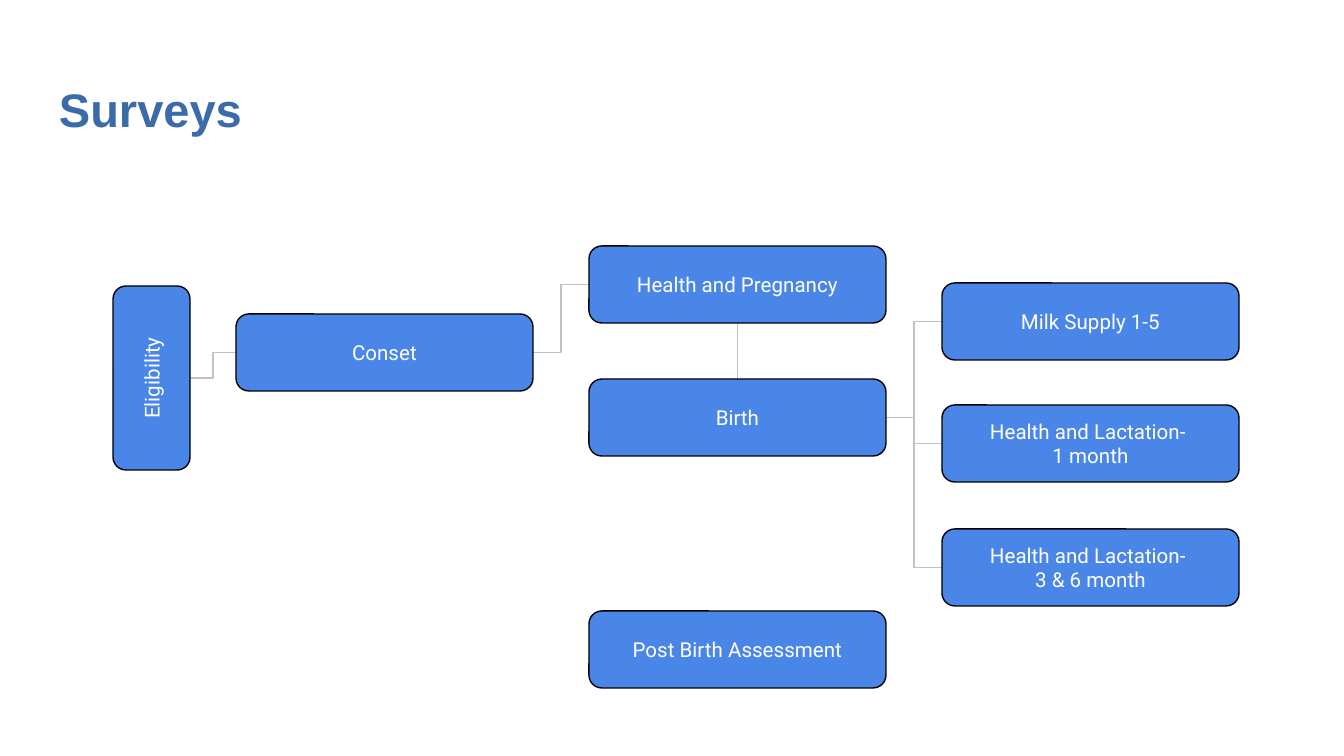
from dataclasses import dataclass

from lxml.etree import SubElement
from pptx import Presentation
from pptx.dml.color import RGBColor as Color
from pptx.enum.shapes import MSO_CONNECTOR as Connector, MSO_SHAPE as Shape
from pptx.enum.text import MSO_ANCHOR as Anchor, PP_ALIGN as Align
from pptx.oxml.ns import qn
from pptx.util import Emu, Pt

EMU_PER_PX = 914400 / 134.4


def px(length):
    return Emu(round(length * EMU_PER_PX))


@dataclass(frozen=True)
class Theme:
    title_color: Color = Color.from_string("3C6BA9")
    box_fill: Color = Color.from_string("4A86E8")
    box_line: Color = Color.from_string("000000")
    box_text: Color = Color.from_string("FFFFFF")
    link: Color = Color.from_string("C2C2C2")
    title_font: str = "Arial"
    box_font: str = "Roboto"
    title_size: float = 25.2
    box_size: float = 11
    line_width: float = 0.75
    inset: int = 13


class FlowPage:
    """Draws the elements of a survey flow on one page."""

    def __init__(self, page, theme):
        self.page = page
        self.theme = theme

    def set_text(self, shape, text, font, size, color, anchor, align, bold=False):
        frame = shape.text_frame
        frame.text = text
        frame.word_wrap = True
        frame.vertical_anchor = anchor
        frame.margin_left = frame.margin_right = px(self.theme.inset)
        frame.margin_top = frame.margin_bottom = px(self.theme.inset)
        for para in frame.paragraphs:
            para.alignment = align
            for span in para.runs:
                span.font.name = font
                span.font.size = Pt(size)
                span.font.bold = bold
                span.font.color.rgb = color

    def title(self, text, left, top, width, height):
        theme = self.theme
        box = self.page.shapes.add_textbox(*map(px, (left, top, width, height)))
        self.set_text(box, text, theme.title_font, theme.title_size,
                      theme.title_color, Anchor.BOTTOM, Align.LEFT, bold=True)

    def box(self, text, left, top, width, height, rotation=0):
        theme = self.theme
        box = self.page.shapes.add_shape(
            Shape.ROUNDED_RECTANGLE, *map(px, (left, top, width, height)))
        box.rotation = rotation
        box.shadow.inherit = False
        box.fill.solid()
        box.fill.fore_color.rgb = theme.box_fill
        box.line.color.rgb = theme.box_line
        box.line.width = Pt(theme.line_width)
        self.set_text(box, text, theme.box_font, theme.box_size,
                      theme.box_text, Anchor.MIDDLE, Align.CENTER)

    def link(self, start, end, kind=Connector.ELBOW):
        line = self.page.shapes.add_connector(kind, *map(px, (*start, *end)))
        line.line.color.rgb = self.theme.link
        line.line.width = Pt(self.theme.line_width)
        SubElement(line._element.spPr, qn("a:effectLst"))


# Layout: three columns of equal boxes, one upright box before them
BOX_WIDTH, BOX_HEIGHT = 297, 77
COLUMNS = [236 + 353 * index for index in range(3)]
UPRIGHT_LENGTH, UPRIGHT_LEFT, UPRIGHT_MIDDLE = 184, 113, 378

# Text, column, top
SURVEYS = {
    "consent": ("Conset", 0, 314),
    "pregnancy": ("Health and Pregnancy", 1, 246),
    "birth": ("Birth", 1, 379),
    "post_birth": ("Post Birth Assessment", 1, 611),
    "milk": ("Milk Supply 1-5", 2, 283),
    "month_1": ("Health and Lactation- \n1 month", 2, 405),
    "month_3_6": ("Health and Lactation- \n3 & 6 month", 2, 529),
}
LINKS = [("consent", "pregnancy"), ("birth", "milk"),
         ("birth", "month_1"), ("birth", "month_3_6")]


def left_side(name):
    _, column, top = SURVEYS[name]
    return COLUMNS[column], top + BOX_HEIGHT / 2


def right_side(name):
    left, middle = left_side(name)
    return left + BOX_WIDTH, middle


def main():
    deck = Presentation()
    deck.slide_width, deck.slide_height = px(1344), px(756)
    flow = FlowPage(deck.slides.add_slide(deck.slide_layouts[6]), Theme())

    flow.title("Surveys", 46, 66, 1253, 84)

    # Links
    flow.link((UPRIGHT_LEFT + BOX_HEIGHT, UPRIGHT_MIDDLE), left_side("consent"))
    for source, target in LINKS:
        flow.link(right_side(source), left_side(target))
    center = COLUMNS[1] + BOX_WIDTH / 2
    flow.link((center, SURVEYS["pregnancy"][2] + BOX_HEIGHT),
              (center, SURVEYS["birth"][2]), Connector.STRAIGHT)

    # Upright box, turned about its centre
    flow.box("Eligibility",
             UPRIGHT_LEFT + (BOX_HEIGHT - UPRIGHT_LENGTH) / 2,
             UPRIGHT_MIDDLE - BOX_HEIGHT / 2,
             UPRIGHT_LENGTH, BOX_HEIGHT, rotation=270)

    # Survey boxes
    for text, column, top in SURVEYS.values():
        flow.box(text, COLUMNS[column], top, BOX_WIDTH, BOX_HEIGHT)

    deck.save("out.pptx")


if __name__ == "__main__":
    main()
